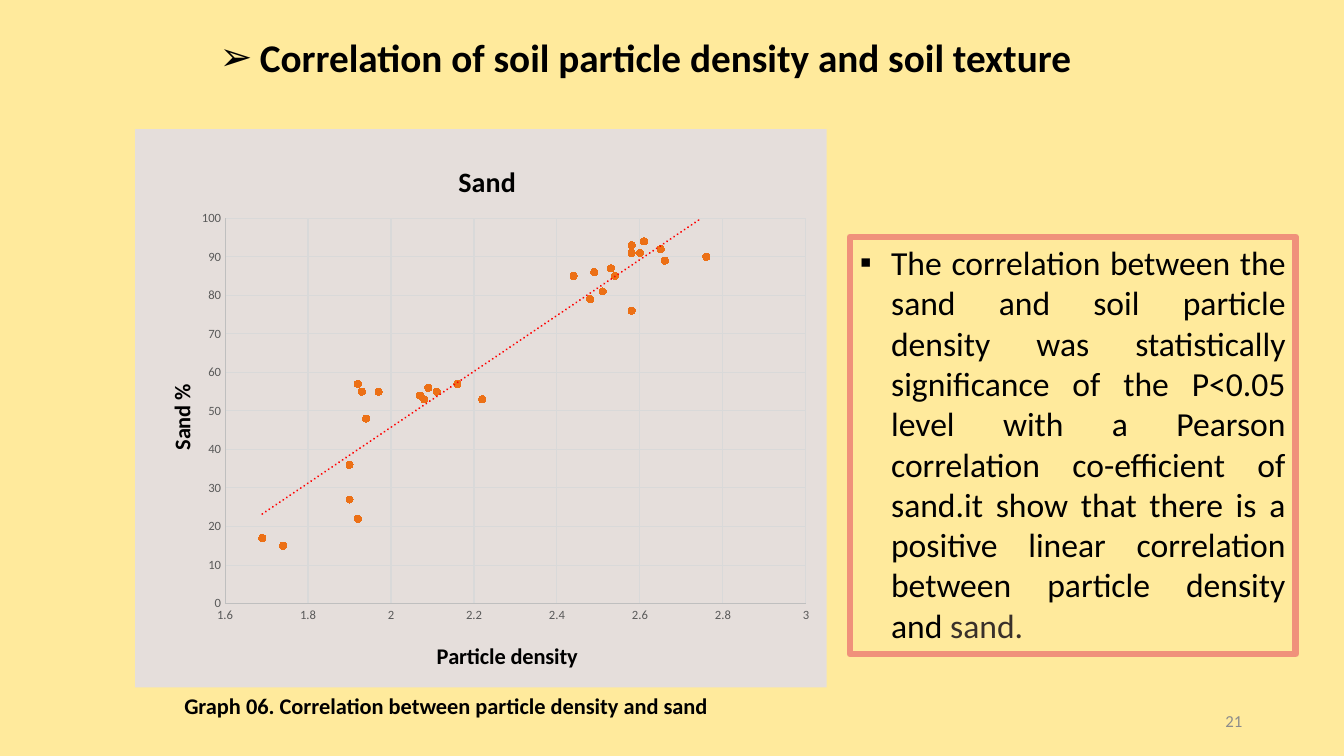
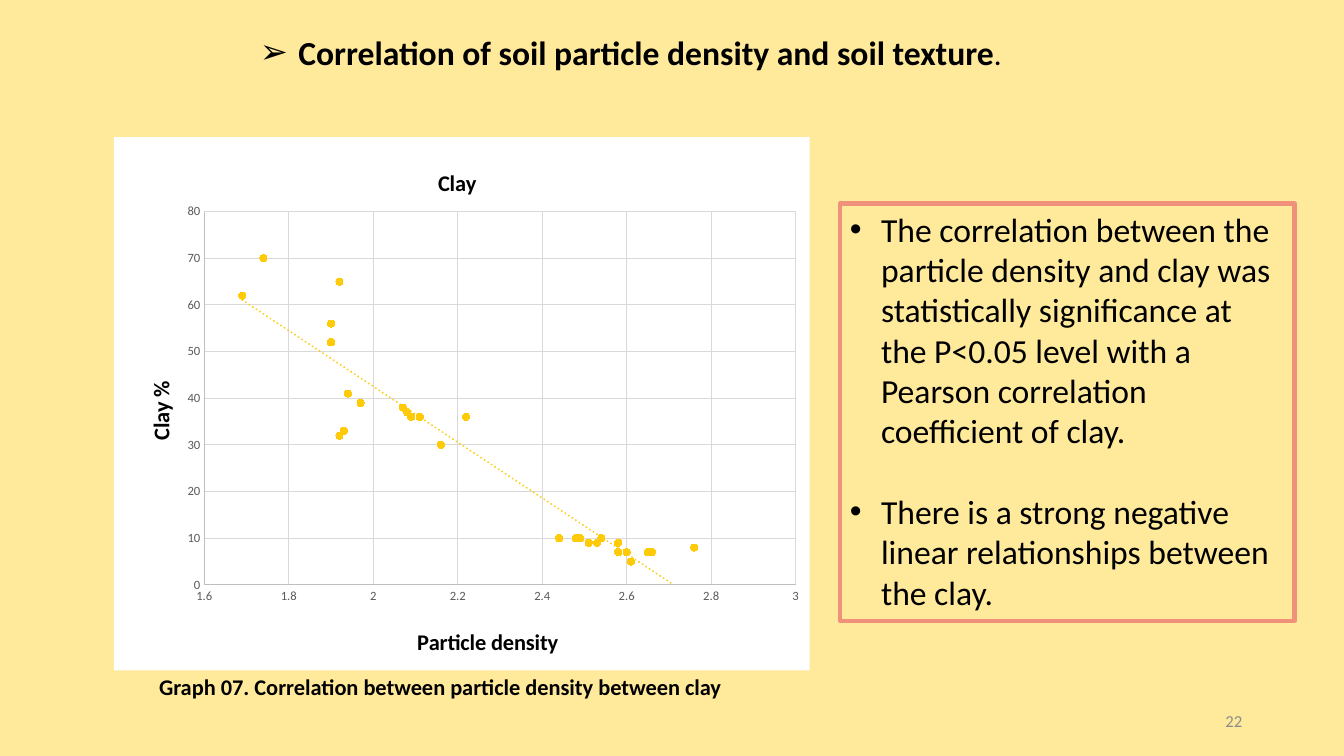
from lxml import etree
from pptx import Presentation
from pptx.chart.data import XyChartData
from pptx.dml.color import RGBColor
from pptx.enum.chart import XL_CHART_TYPE, XL_MARKER_STYLE, XL_TICK_MARK
from pptx.enum.shapes import MSO_SHAPE
from pptx.enum.text import MSO_ANCHOR, PP_ALIGN
from pptx.oxml import parse_xml
from pptx.oxml.ns import nsdecls, qn
from pptx.util import Inches, Pt

SCATTER = XL_CHART_TYPE.XY_SCATTER
CIRCLE = XL_MARKER_STYLE.CIRCLE
NO_TICK = XL_TICK_MARK.NONE
RECTANGLE = MSO_SHAPE.RECTANGLE
TOP, MIDDLE = MSO_ANCHOR.TOP, MSO_ANCHOR.MIDDLE
LEFT, RIGHT, JUSTIFY = PP_ALIGN.LEFT, PP_ALIGN.RIGHT, PP_ALIGN.JUSTIFY

FONT = "Calibri"
BLACK = RGBColor(0x00, 0x00, 0x00)
WHITE = RGBColor(0xFF, 0xFF, 0xFF)
CREAM = RGBColor(0xFF, 0xEA, 0x9C)
STONE = RGBColor(0xE5, 0xDE, 0xDB)
CORAL = RGBColor(0xF0, 0x91, 0x7B)
BROWN = RGBColor(0x39, 0x30, 0x2A)
ORANGE = RGBColor(0xEC, 0x70, 0x16)
YELLOW = RGBColor(0xFF, 0xCA, 0x08)
RED = RGBColor(0xFF, 0x00, 0x00)
NUMBER_GREY = RGBColor(0x8C, 0x8C, 0x8C)
LABEL_GREY = RGBColor(0x59, 0x59, 0x59)
AXIS_GREY = RGBColor(0xBF, 0xBF, 0xBF)
GRID_GREY = RGBColor(0xD9, 0xD9, 0xD9)

HEADING = "Correlation of soil particle density and soil texture"
DENSITY = [2.07, 2.08, 2.22, 1.97, 2.16, 1.9, 1.9, 1.74, 1.92, 1.69,
           1.92, 2.09, 1.93, 1.94, 2.11, 2.66, 2.54, 2.49, 2.76, 2.53,
           2.61, 2.58, 2.58, 2.6, 2.65, 2.53, 2.51, 2.58, 2.48, 2.44]
SAND = [54, 53, 53, 55, 57, 27, 36, 15, 22, 17, 57, 56, 55, 48, 55,
        89, 85, 86, 90, 87, 94, 93, 91, 91, 92, 87, 81, 76, 79, 85]
CLAY = [38, 37, 36, 39, 30, 56, 52, 70, 65, 62, 32, 36, 33, 41, 36,
        7, 10, 10, 8, 9, 5, 7, 7, 7, 7, 9, 9, 9, 10, 10]


def set_font(font, size, color=BLACK, bold=False):
    """Apply the deck's typeface with a size, colour and weight."""
    font.name, font.size, font.bold = FONT, Pt(size), bold
    font.color.rgb = color


def add_bullet(paragraph, mark, indent):
    """Give a paragraph a hanging bullet."""
    props = paragraph._p.get_or_add_pPr()
    props.set("marL", str(Inches(indent)))
    props.set("indent", str(-Inches(indent)))
    etree.SubElement(props, qn("a:buFont")).set("typeface", "Arial")
    etree.SubElement(props, qn("a:buChar")).set("char", mark)


def add_text(slide, box, text, size, color=BLACK, bold=False, align=LEFT,
             anchor=TOP, bullet=None):
    """Place a one-paragraph text box and return its paragraph."""
    frame = slide.shapes.add_textbox(*map(Inches, box)).text_frame
    frame.word_wrap = True
    frame.vertical_anchor = anchor
    paragraph = frame.paragraphs[0]
    paragraph.text = text
    paragraph.alignment = align
    if bullet:
        add_bullet(paragraph, *bullet)
    set_font(paragraph.font, size, color, bold)
    return paragraph


def add_findings(slide, box, findings, mark, border, align=LEFT):
    """Draw the outlined box with its bulleted findings."""
    panel = slide.shapes.add_shape(RECTANGLE, *map(Inches, box))
    panel.shadow.inherit = False
    panel.fill.background()
    panel.line.color.rgb = CORAL
    panel.line.width = Pt(border)
    frame = panel.text_frame
    frame.word_wrap = True
    frame.vertical_anchor = TOP
    for index, finding in enumerate(findings):
        paragraph = frame.add_paragraph() if index else frame.paragraphs[0]
        paragraph.text = finding
        paragraph.alignment = align
        add_bullet(paragraph, mark, 0.31)
        if index:
            paragraph.space_before = Pt(29)
        set_font(paragraph.font, 24)
    return frame


def manual_layout(x, y, size=None):
    """Build a chart layout from fractions of the chart box."""
    parts = [("xMode", "edge"), ("yMode", "edge"), ("x", x), ("y", y)]
    if size:
        parts.insert(0, ("layoutTarget", "inner"))
        parts += zip("wh", size)
    body = "".join(f'<c:{tag} val="{value}"/>' for tag, value in parts)
    return parse_xml(f'<c:layout {nsdecls("c")}><c:manualLayout>{body}'
                     '</c:manualLayout></c:layout>')


def replace_layout(element, layout, after=None):
    """Swap the layout of a chart part for the given one."""
    for old in element.findall(qn("c:layout")):
        element.remove(old)
    if after is None:
        element.insert(0, layout)
    else:
        element.find(qn(after)).addnext(layout)


def title_part(title, text, size, x, y):
    """Write and position a chart or axis title."""
    paragraph = title.text_frame.paragraphs[0]
    paragraph.text = text
    set_font(paragraph.font, size, bold=True)
    replace_layout(title.element, manual_layout(x, y), "c:tx")


def style_axis(axis, low, high, step):
    """Set the scale, grid and labels of a value axis."""
    axis.minimum_scale, axis.maximum_scale, axis.major_unit = low, high, step
    axis.major_tick_mark = axis.minor_tick_mark = NO_TICK
    axis.has_major_gridlines = True
    for line, color in ((axis.format.line, AXIS_GREY),
                        (axis.major_gridlines.format.line, GRID_GREY)):
        line.color.rgb = color
        line.width = Pt(0.75)
    axis.tick_labels.number_format = "General"
    axis.tick_labels.number_format_is_linked = False
    set_font(axis.tick_labels.font, 9, LABEL_GREY)


def add_trend(chart, color):
    """Add a dotted linear trend line to the only series."""
    trend = parse_xml(
        f'<c:trendline {nsdecls("c", "a")}><c:spPr><a:ln w="{Pt(1.5)}" cap="rnd">'
        f'<a:solidFill><a:srgbClr val="{color}"/></a:solidFill>'
        '<a:prstDash val="sysDot"/></a:ln></c:spPr>'
        '<c:trendlineType val="linear"/><c:dispRSqr val="0"/>'
        '<c:dispEq val="0"/></c:trendline>')
    next(chart.element.iter(qn("c:xVal"))).addprevious(trend)


def add_scatter(slide, box, soil, values, top, title_size, plot, back, dots, trend):
    """Plot a soil fraction against particle density."""
    data = XyChartData()
    points = data.add_series("Series 1")
    for density, value in zip(DENSITY, values):
        points.add_data_point(density, value)
    chart = slide.shapes.add_chart(SCATTER, *map(Inches, box), data).chart
    set_font(chart.font, 10)
    chart.has_legend = False
    chart.has_title = True
    title_part(chart.chart_title, soil, title_size, 0.46, 0.05)
    chart.chart_title.include_in_layout = False
    style_axis(chart.category_axis, 1.6, 3, 0.2)
    style_axis(chart.value_axis, 0, top, 10)
    title_part(chart.category_axis.axis_title, "Particle density", 16, 0.43, 0.91)
    title_part(chart.value_axis.axis_title, f"{soil} %", 16, 0.04, 0.45)
    chart.plots[0].vary_by_categories = False
    series = chart.plots[0].series[0]
    series.format.line.fill.background()
    series.marker.style = CIRCLE
    series.marker.size = 5
    series.marker.format.fill.solid()
    series.marker.format.fill.fore_color.rgb = dots
    series.marker.format.line.color.rgb = dots
    add_trend(chart, trend)
    x, y, *size = plot
    area = next(chart.element.iter(qn("c:plotArea")))
    replace_layout(area, manual_layout(x, y, size))
    chart.element.find(qn("c:chart")).addnext(parse_xml(
        f'<c:spPr {nsdecls("c", "a")}><a:solidFill><a:srgbClr val="{back}"/>'
        '</a:solidFill><a:ln><a:noFill/></a:ln></c:spPr>'))


def new_slide(deck, number):
    """Add a slide with the shared background and page number."""
    slide = deck.slides.add_slide(deck.slide_layouts[6])
    slide.background.fill.solid()
    slide.background.fill.fore_color.rgb = CREAM
    add_text(slide, (9.42, 6.95, 3, 0.4), str(number), 12, NUMBER_GREY,
             align=RIGHT, anchor=MIDDLE)
    return slide


def sand_slide(deck):
    """Build the slide on sand."""
    slide = new_slide(deck, 21)
    add_text(slide, (2.08, 0.28, 8.75, 0.57), HEADING, 28, bold=True,
             bullet=("➢", 0.4))
    frame = add_findings(slide, (8.43, 2.35, 4.42, 4.14), [
        "The correlation between the sand and soil particle density was "
        "statistically significance of the P<0.05 level with a Pearson "
        "correlation co-efficient of sand.it show that there is a positive "
        "linear correlation between particle density and "], "▪", 4.5, JUSTIFY)
    last_word = frame.paragraphs[0].add_run()
    last_word.text = "sand."
    last_word.font.color.rgb = BROWN
    add_scatter(slide, (1.34, 1.28, 6.86, 5.54), "Sand", SAND, 100, 20,
                (0.13, 0.16, 0.84, 0.69), STONE, ORANGE, RED)
    add_text(slide, (1.73, 6.82, 5.46, 0.37),
             "Graph 06. Correlation between particle density and sand", 16, bold=True)


def clay_slide(deck):
    """Build the slide on clay."""
    slide = new_slide(deck, 22)
    add_findings(slide, (8.33, 2.02, 4.51, 4.14), [
        "The correlation between the particle density and clay was "
        "statistically significance at the P<0.05 level with a Pearson "
        "correlation coefficient of clay.",
        "There is a strong negative linear relationships between the clay."],
        "•", 3)
    add_scatter(slide, (1.13, 1.36, 6.9, 5.29), "Clay", CLAY, 80, 16,
                (0.13, 0.14, 0.85, 0.7), WHITE, YELLOW, YELLOW)
    add_text(slide, (1.48, 6.63, 5.83, 0.37),
             "Graph 07. Correlation between particle density between clay", 16,
             bold=True)
    heading = add_text(slide, (2.48, 0.27, 10.25, 0.5), HEADING, 24, bold=True,
                       bullet=("➢", 0.38))
    full_stop = heading.add_run()
    full_stop.text = "."
    full_stop.font.size = Pt(18)


def main():
    """Build and save the presentation."""
    deck = Presentation()
    deck.slide_width, deck.slide_height = Inches(13.33), Inches(7.5)
    sand_slide(deck)
    clay_slide(deck)
    deck.save("out.pptx")


if __name__ == "__main__":
    main()
